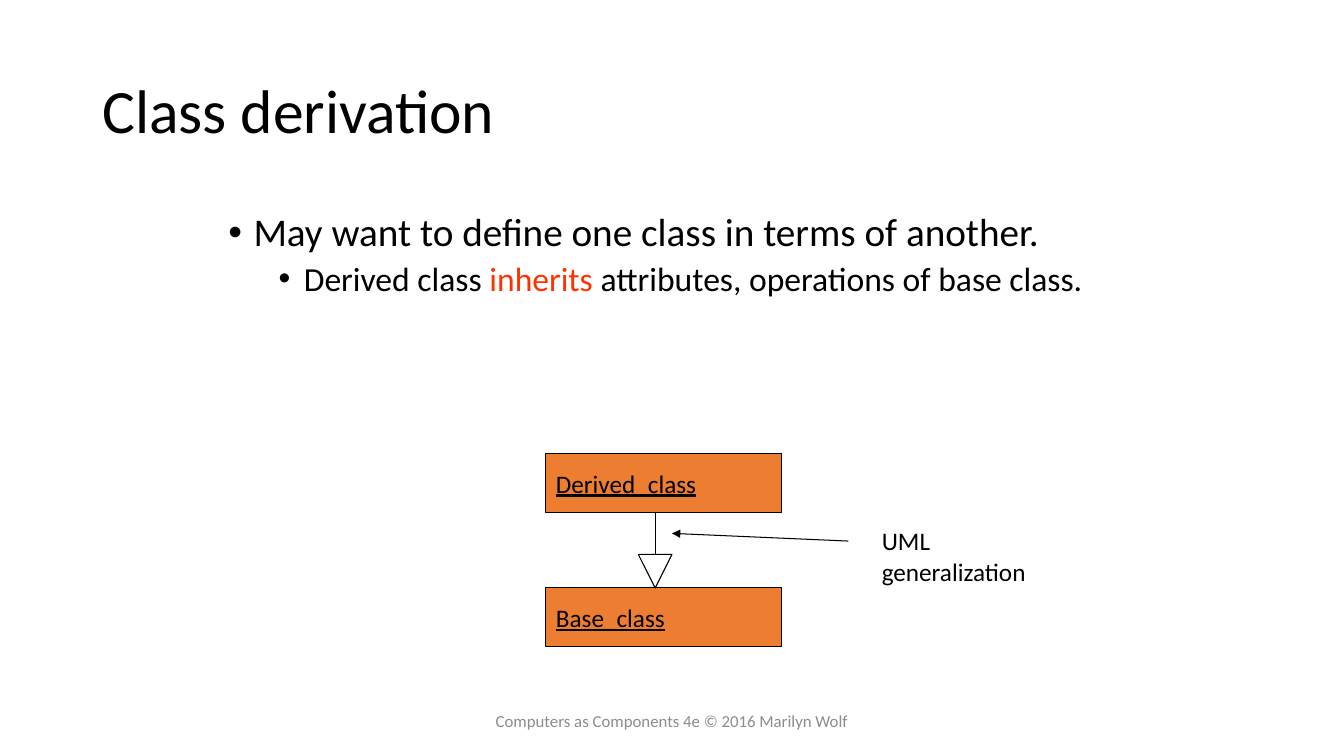
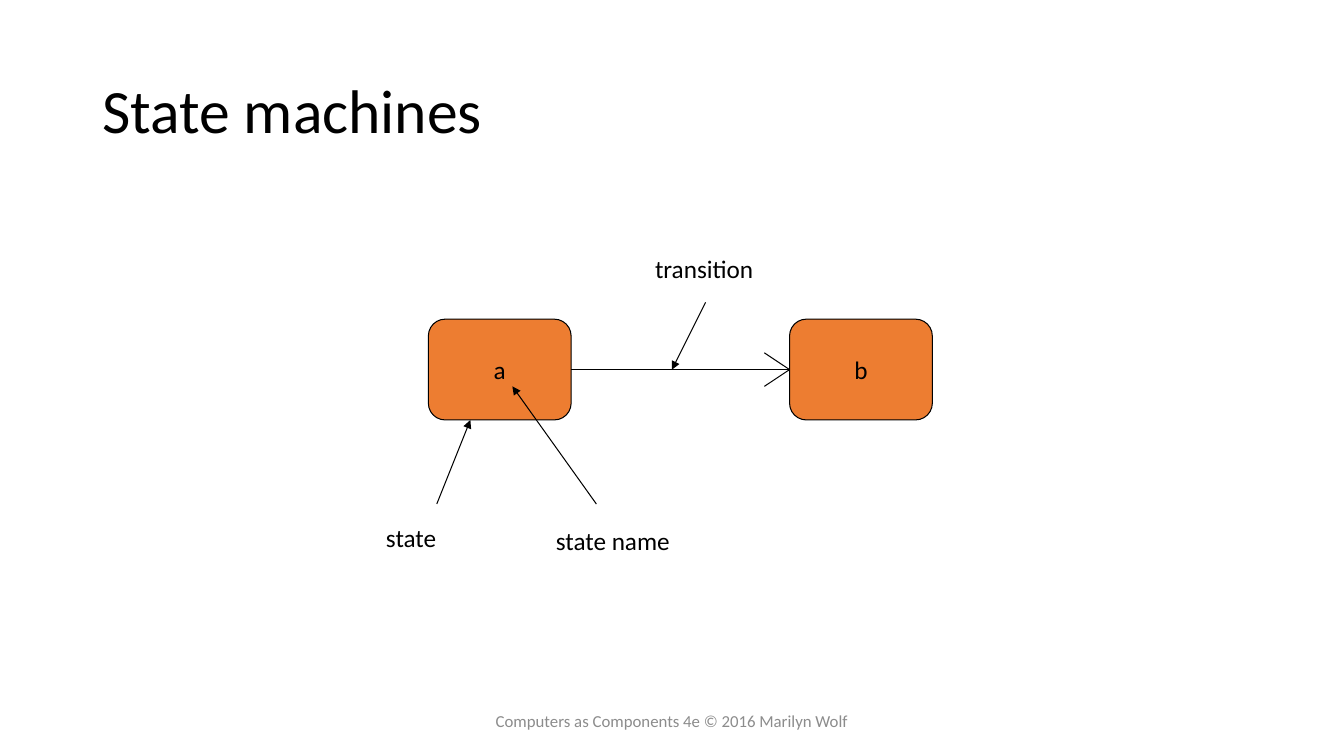
import dataclasses
import typing

import lxml.etree
import pptx
import pptx.dml.color
import pptx.enum.shapes
import pptx.enum.text
import pptx.oxml.ns
import pptx.util

Pt = pptx.util.Pt
Shapes = pptx.enum.shapes.MSO_SHAPE
Align = pptx.enum.text.PP_ALIGN
Anchor = pptx.enum.text.MSO_ANCHOR
qn = pptx.oxml.ns.qn

FONT = "Calibri"
BLACK, WHITE, ORANGE, RED, GRAY = "000000", "FFFFFF", "ED7D31", "FF3300", "8C8C8C"
LINE_WIDTH = 0.75
LABEL_SIZE = 18
FOOTER = "Computers as Components 4e © 2016 Marilyn Wolf"


class Area(typing.NamedTuple):
    left: float
    top: float
    width: float
    height: float


class Point(typing.NamedTuple):
    x: float
    y: float


@dataclasses.dataclass(frozen=True)
class Span:
    text: str
    size: float = LABEL_SIZE
    color: str = BLACK
    underline: bool = False


@dataclasses.dataclass(frozen=True)
class Node:
    area: Area
    span: Span
    preset: typing.Any
    align: typing.Any


@dataclasses.dataclass(frozen=True)
class Stroke:
    start: Point
    end: Point
    arrow: bool = False


@dataclasses.dataclass(frozen=True)
class Label:
    area: Area
    lines: tuple[str, ...]


@dataclasses.dataclass(frozen=True)
class Bullet:
    indent: float
    space: float
    spans: tuple[Span, ...]


def rgb(color: str):
    return pptx.dml.color.RGBColor.from_string(color)


def add_spans(para, *spans: Span) -> None:
    for span in spans:
        run = para.add_run()
        run.text = span.text
        run.font.name = FONT
        run.font.size = Pt(span.size)
        run.font.color.rgb = rgb(span.color)
        if span.underline:
            run.font.underline = True


def add_box(page, area: Area, anchor=Anchor.TOP):
    frame = page.shapes.add_textbox(*map(Pt, area)).text_frame
    frame.word_wrap = True
    frame.vertical_anchor = anchor
    return frame


def add_shape(page, preset, area: Area, fill: str):
    shape = page.shapes.add_shape(preset, *map(Pt, area))
    shape.shadow.inherit = False
    shape.fill.solid()
    shape.fill.fore_color.rgb = rgb(fill)
    shape.line.color.rgb = rgb(BLACK)
    shape.line.width = Pt(LINE_WIDTH)
    return shape


def add_node(page, node: Node) -> None:
    frame = add_shape(page, node.preset, node.area, ORANGE).text_frame
    frame.word_wrap = True
    frame.vertical_anchor = Anchor.MIDDLE
    para = frame.paragraphs[0]
    para.alignment = node.align
    add_spans(para, node.span)


def add_stroke(page, stroke: Stroke) -> None:
    line = page.shapes.add_connector(
        pptx.enum.shapes.MSO_CONNECTOR.STRAIGHT,
        *map(Pt, (*stroke.start, *stroke.end)),
    )
    line.line.color.rgb = rgb(BLACK)
    line.line.width = Pt(LINE_WIDTH)
    if stroke.arrow:
        tail = lxml.etree.SubElement(line.line._get_or_add_ln(), qn("a:tailEnd"))
        tail.set("type", "triangle")
    lxml.etree.SubElement(line._element.spPr, qn("a:effectLst"))


def add_label(page, label: Label) -> None:
    frame = add_box(page, label.area)
    frame.word_wrap = False
    frame.auto_size = pptx.enum.text.MSO_AUTO_SIZE.SHAPE_TO_FIT_TEXT
    for index, text in enumerate(label.lines):
        para = frame.add_paragraph() if index else frame.paragraphs[0]
        add_spans(para, Span(text))


def add_bullets(page, area: Area, bullets: list[Bullet]) -> None:
    frame = add_box(page, area)
    for index, bullet in enumerate(bullets):
        para = frame.add_paragraph() if index else frame.paragraphs[0]
        para.level = index
        para.line_spacing = 0.9
        para.space_before = Pt(bullet.space)
        properties = para._p.get_or_add_pPr()
        properties.set("marL", str(Pt(bullet.indent)))
        properties.set("indent", str(Pt(-18)))
        font = lxml.etree.SubElement(properties, qn("a:buFont"))
        font.set("typeface", "Arial")
        lxml.etree.SubElement(properties, qn("a:buChar")).set("char", "•")
        add_spans(para, *bullet.spans)


def add_page(deck, title: str):
    page = deck.slides.add_slide(deck.slide_layouts[6])
    para = add_box(page, Area(66, 28.8, 828, 104.4), Anchor.MIDDLE).paragraphs[0]
    para.line_spacing = 0.9
    add_spans(para, Span(title, 44))
    para = add_box(page, Area(318, 500.5, 324, 28.8), Anchor.MIDDLE).paragraphs[0]
    para.alignment = Align.CENTER
    add_spans(para, Span(FOOTER, 12, GRAY))
    return page


def build_class_derivation(deck) -> None:
    page = add_page(deck, "Class derivation")
    add_bullets(page, Area(156, 148.5, 644, 175.5), [
        Bullet(18, 10, (Span("May want to define one class in terms of another.", 28),)),
        Bullet(54, 5, (
            Span("Derived class ", 24),
            Span("inherits", 24, RED),
            Span(" attributes, operations of base class.", 24),
        )),
    ])
    for top, name in ((324, "Derived_class"), (420, "Base_class")):
        span = Span(name, underline=True)
        add_node(page, Node(Area(390, top, 168, 42), span, Shapes.RECTANGLE, Align.LEFT))
    triangle = add_shape(page, Shapes.ISOSCELES_TRIANGLE, Area(456, 396, 24, 24), WHITE)
    triangle.rotation = 180
    add_stroke(page, Stroke(Point(468, 396), Point(468, 366)))
    add_stroke(page, Stroke(Point(606, 386.5), Point(480, 381), True))
    add_label(page, Label(Area(622.8, 372, 118.8, 51), ("UML", "generalization")))


def build_state_machines(deck) -> None:
    page = add_page(deck, "State machines")
    for left, name in ((306, "a"), (564, "b")):
        area = Area(left, 228, 102, 72)
        add_node(page, Node(area, Span(name), Shapes.ROUNDED_RECTANGLE, Align.CENTER))
    tip = Point(564, 264)
    strokes = [
        Stroke(Point(408, 264), tip),
        Stroke(tip, Point(546, 252)),
        Stroke(tip, Point(546, 276)),
        Stroke(Point(312, 360), Point(336, 300), True),
        Stroke(Point(426, 360), Point(366, 276), True),
        Stroke(Point(504, 216), Point(480, 264), True),
    ]
    for stroke in strokes:
        add_stroke(page, stroke)
    labels = [
        Label(Area(268.6, 369.6, 50.4, 29), ("state",)),
        Label(Area(390, 372, 96.5, 29), ("state name",)),
        Label(Area(460.8, 177.4, 85.7, 29), ("transition",)),
    ]
    for label in labels:
        add_label(page, label)


def main() -> None:
    deck = pptx.Presentation()
    deck.slide_width, deck.slide_height = Pt(960), Pt(540)
    build_class_derivation(deck)
    build_state_machines(deck)
    deck.save("out.pptx")


if __name__ == "__main__":
    main()
